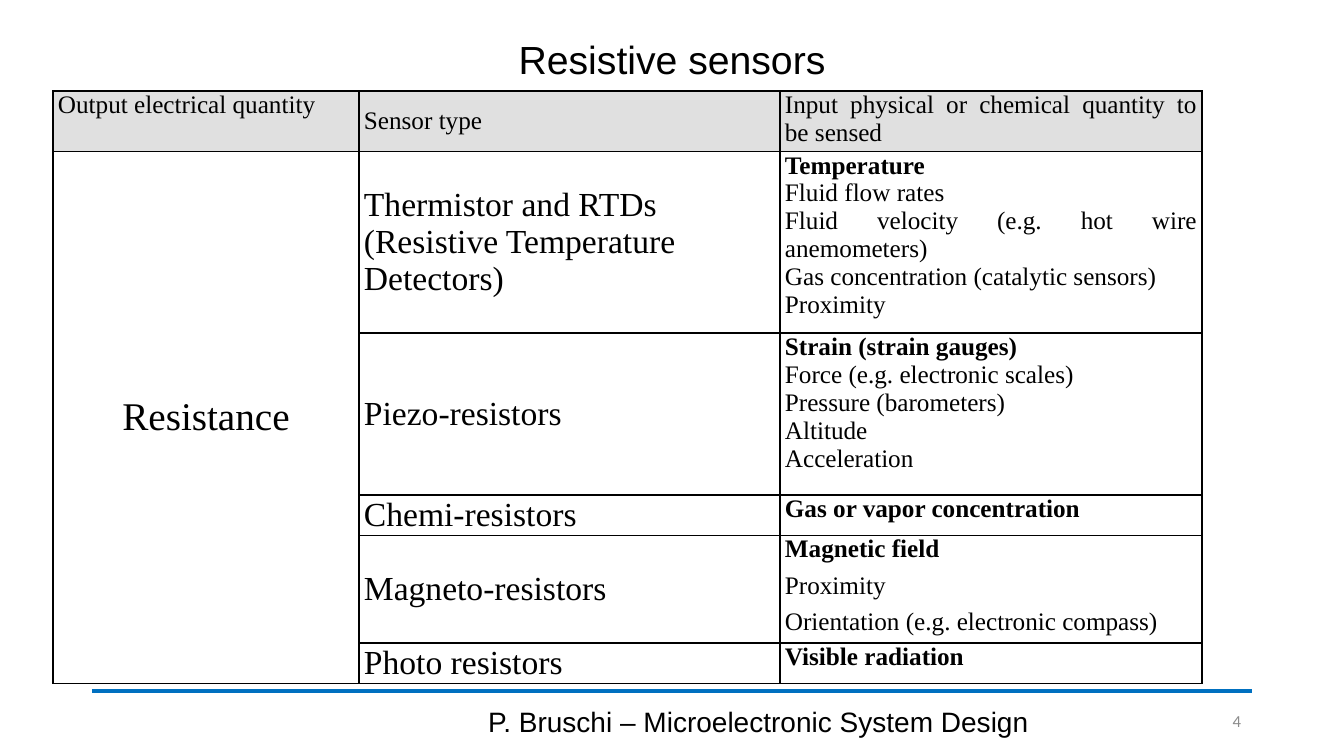
import pptx
import pptx.dml.color
import pptx.enum.shapes
import pptx.enum.text
import pptx.oxml
import pptx.oxml.ns
import pptx.util

COLORS = {"black": "000000", "header": "E0E0E0", "rule": "0070C0", "number": "8C8C8C"}
SERIF = "Times New Roman"
ALIGN = pptx.enum.text.PP_ALIGN
ANCHOR = pptx.enum.text.MSO_ANCHOR


def px(length):
    return pptx.util.Emu(round(length * 914400 / 100.8))


def write(para, text, size, font, color="black", align=ALIGN.JUSTIFY, bold=False):
    para.alignment = align
    span = para.add_run()
    span.text = text
    span.font.size = pptx.util.Pt(size)
    span.font.name = font
    span.font.bold = bold
    span.font.color.rgb = pptx.dml.color.RGBColor.from_string(COLORS[color])


deck = pptx.Presentation()
deck.slide_width = px(1344)
deck.slide_height = px(756)
page = deck.slides.add_slide(deck.slide_layouts[6])

rule = page.shapes.add_connector(
    pptx.enum.shapes.MSO_CONNECTOR.STRAIGHT, px(92), px(691), px(1252), px(691))
rule.line.color.rgb = pptx.dml.color.RGBColor.from_string(COLORS["rule"])
rule.line.width = pptx.util.Pt(2.75)
properties = rule.element.find(pptx.oxml.ns.qn("p:spPr"))
properties.append(pptx.oxml.parse_xml(f'<a:effectLst {pptx.oxml.ns.nsdecls("a")}/>'))

captions = [
    ((92, 23, 1160, 72), "Resistive sensors", 28, "Arial", "black", ALIGN.CENTER),
    ((445, 701, 627, 40), "P. Bruschi – Microelectronic System Design", 20, "Arial", "black",
     ALIGN.CENTER),
    ((1154, 701, 97, 40), "4", 12, "Calibri", "number", ALIGN.RIGHT),
]
for place, text, size, font, color, align in captions:
    box = page.shapes.add_textbox(*map(px, place))
    box.text_frame.word_wrap = True
    box.text_frame.vertical_anchor = ANCHOR.MIDDLE
    write(box.text_frame.paragraphs[0], text, size, font, color, align)

headings = ["Output electrical quantity", "Sensor type",
            "Input physical or chemical quantity to be sensed"]
sensors = [
    ("Thermistor and RTDs (Resistive Temperature Detectors)", 167, 0,
     ["Temperature", "Fluid flow rates", "Fluid velocity (e.g. hot wire anemometers)",
      "Gas concentration (catalytic sensors)", "Proximity"]),
    ("Piezo-resistors", 162, 0,
     ["Strain (strain gauges)", "Force (e.g. electronic scales)", "Pressure (barometers)",
      "Altitude", "Acceleration"]),
    ("Chemi-resistors", 40, 6, ["Gas or vapor concentration"]),
    ("Magneto-resistors", 101, 6,
     ["Magnetic field", "Proximity", "Orientation (e.g. electronic compass)"]),
    ("Photo resistors", 38, 6, ["Visible radiation"]),
]
widths = [306, 421, 422]
heights = [60] + [height for _, height, _, _ in sensors]

frame = page.shapes.add_table(
    len(heights), len(widths), px(53), px(91), px(sum(widths)), px(sum(heights)))
table = frame.table
table.first_row = False
table.horz_banding = False
for column, width in zip(table.columns, widths):
    column.width = px(width)
for row, height in zip(table.rows, heights):
    row.height = px(height)

for row_index, row in enumerate(table.rows):
    for column_index, cell in enumerate(row.cells):
        cell.margin_left = cell.margin_right = px(5)
        cell.margin_top = cell.margin_bottom = 0
        middle = column_index == 1 or (column_index == 0 and row_index > 0)
        cell.vertical_anchor = ANCHOR.MIDDLE if middle else ANCHOR.TOP
        borders = cell._tc.get_or_add_tcPr()
        for side in ("lnL", "lnR", "lnT", "lnB"):
            borders.append(pptx.oxml.parse_xml(
                f'<a:{side} {pptx.oxml.ns.nsdecls("a")} w="12700"><a:solidFill>'
                f'<a:srgbClr val="{COLORS["black"]}"/></a:solidFill></a:{side}>'))
        if row_index == 0:
            cell.fill.solid()
            cell.fill.fore_color.rgb = pptx.dml.color.RGBColor.from_string(COLORS["header"])
        else:
            cell.fill.background()

for column_index, heading in enumerate(headings):
    para = table.cell(0, column_index).text_frame.paragraphs[0]
    para.space_after = pptx.util.Pt(6)
    write(para, heading, 18, SERIF)

quantity = table.cell(1, 0)
quantity.merge(table.cell(len(sensors), 0))
para = quantity.text_frame.paragraphs[0]
para.space_after = pptx.util.Pt(6)
write(para, "Resistance", 28, SERIF, align=ALIGN.CENTER)

for row_index, (sensor, _, gap, inputs) in enumerate(sensors, 1):
    para = table.cell(row_index, 1).text_frame.paragraphs[0]
    para.space_after = pptx.util.Pt(gap)
    write(para, sensor, 24, SERIF, align=ALIGN.LEFT if row_index == 1 else ALIGN.JUSTIFY)
    text_frame = table.cell(row_index, 2).text_frame
    for line_index, sensed in enumerate(inputs):
        para = text_frame.add_paragraph() if line_index else text_frame.paragraphs[0]
        para.space_after = pptx.util.Pt(gap)
        write(para, sensed, 18, SERIF, bold=line_index == 0)

deck.save("out.pptx")
